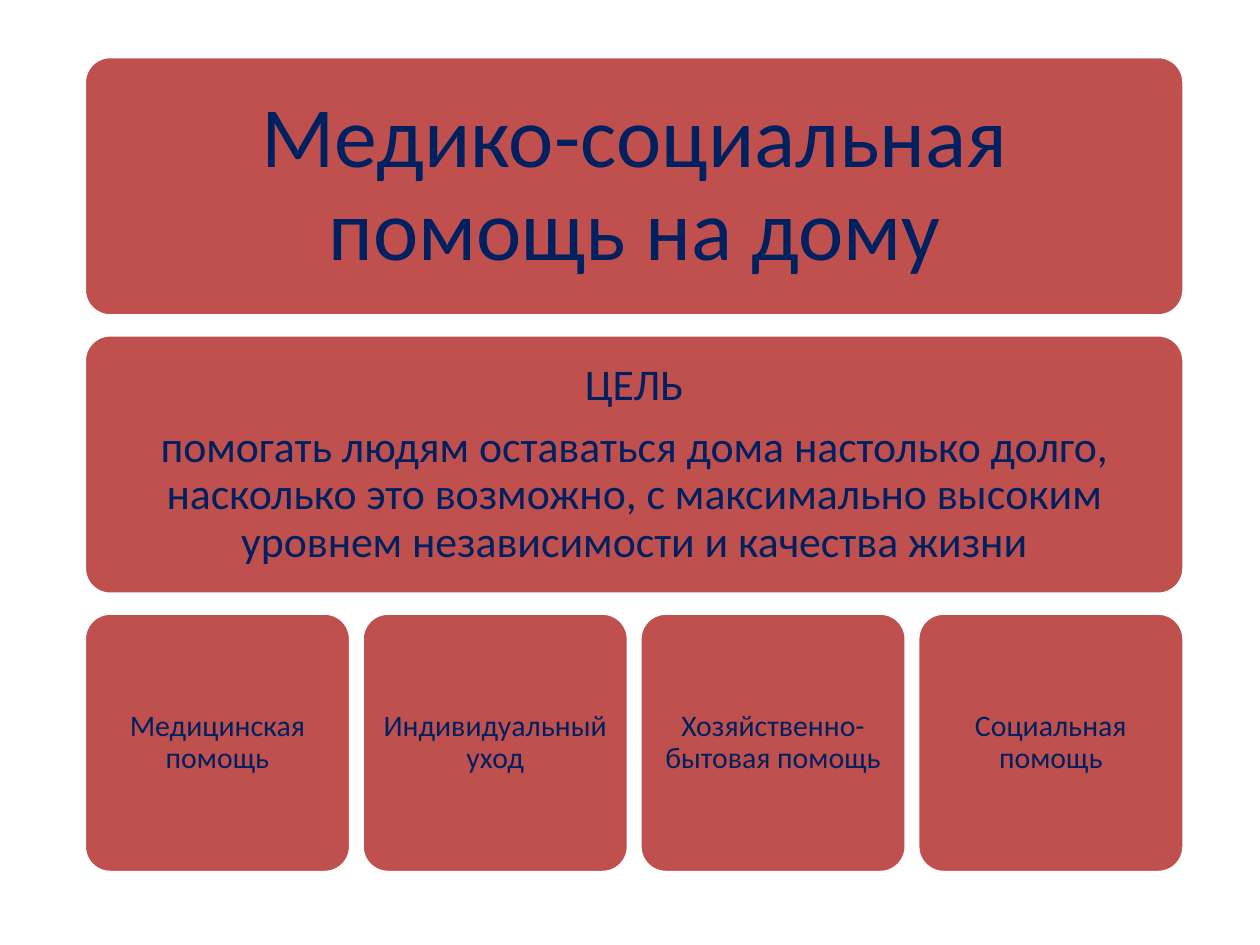
from pptx import Presentation
from pptx.dml.color import RGBColor
from pptx.enum.shapes import MSO_SHAPE
from pptx.enum.text import MSO_ANCHOR, PP_ALIGN
from pptx.util import Cm, Pt

ROUNDED = MSO_SHAPE.ROUNDED_RECTANGLE
MIDDLE = MSO_ANCHOR.MIDDLE
CENTER = PP_ALIGN.CENTER

RED, NAVY, WHITE = "C0504D", "002060", "FFFFFF"

# Each row: font size in points, text inset in cm, and the paragraphs of each box
ROWS = [
    (49, 0.51, [["Медико-социальная помощь на дому"]]),
    (25, 0.25, [[
        "ЦЕЛЬ",
        "помогать людям оставаться дома настолько долго, насколько это "
        "возможно, с максимально высоким уровнем независимости и качества жизни",
    ]]),
    (17, 0.18, [
        ["Медицинская помощь"],
        ["Индивидуальный уход"],
        ["Хозяйственно-бытовая помощь"],
        ["Социальная помощь"],
    ]),
]

# Grid in cm
LEFT, TOP, WIDTH = 1.7, 1.14, 22.17
ROW_HEIGHT, ROW_GAP, COLUMN_GAP = 5.23, 0.38, 0.23


def color(value):
    return RGBColor.from_string(value)


def add_box(page, left, top, width, lines, size, inset):
    box = page.shapes.add_shape(ROUNDED, Cm(left), Cm(top), Cm(width), Cm(ROW_HEIGHT))
    box.adjustments[0] = 0.1
    box.shadow.inherit = False
    box.fill.solid()
    box.fill.fore_color.rgb = color(RED)
    box.line.color.rgb = color(WHITE)
    box.line.width = Pt(2)

    frame = box.text_frame
    frame.word_wrap = True
    frame.vertical_anchor = MIDDLE
    frame.margin_left = frame.margin_right = Cm(inset)
    frame.margin_top = frame.margin_bottom = Cm(inset)
    frame.text = "\n".join(lines)
    for para in frame.paragraphs:
        para.alignment = CENTER
        para.line_spacing = 0.9
        para.space_after = Pt(0.35 * size)
        for span in para.runs:
            span.font.name = "Calibri"
            span.font.size = Pt(size)
            span.font.color.rgb = color(NAVY)


def main():
    deck = Presentation()
    deck.slide_width, deck.slide_height = Cm(25.4), Cm(19.05)
    page = deck.slides.add_slide(deck.slide_layouts[6])

    for row, (size, inset, boxes) in enumerate(ROWS):
        top = TOP + row * (ROW_HEIGHT + ROW_GAP)
        width = (WIDTH - COLUMN_GAP * (len(boxes) - 1)) / len(boxes)
        for column, lines in enumerate(boxes):
            left = LEFT + column * (width + COLUMN_GAP)
            add_box(page, left, top, width, lines, size, inset)

    deck.save("out.pptx")


if __name__ == "__main__":
    main()
